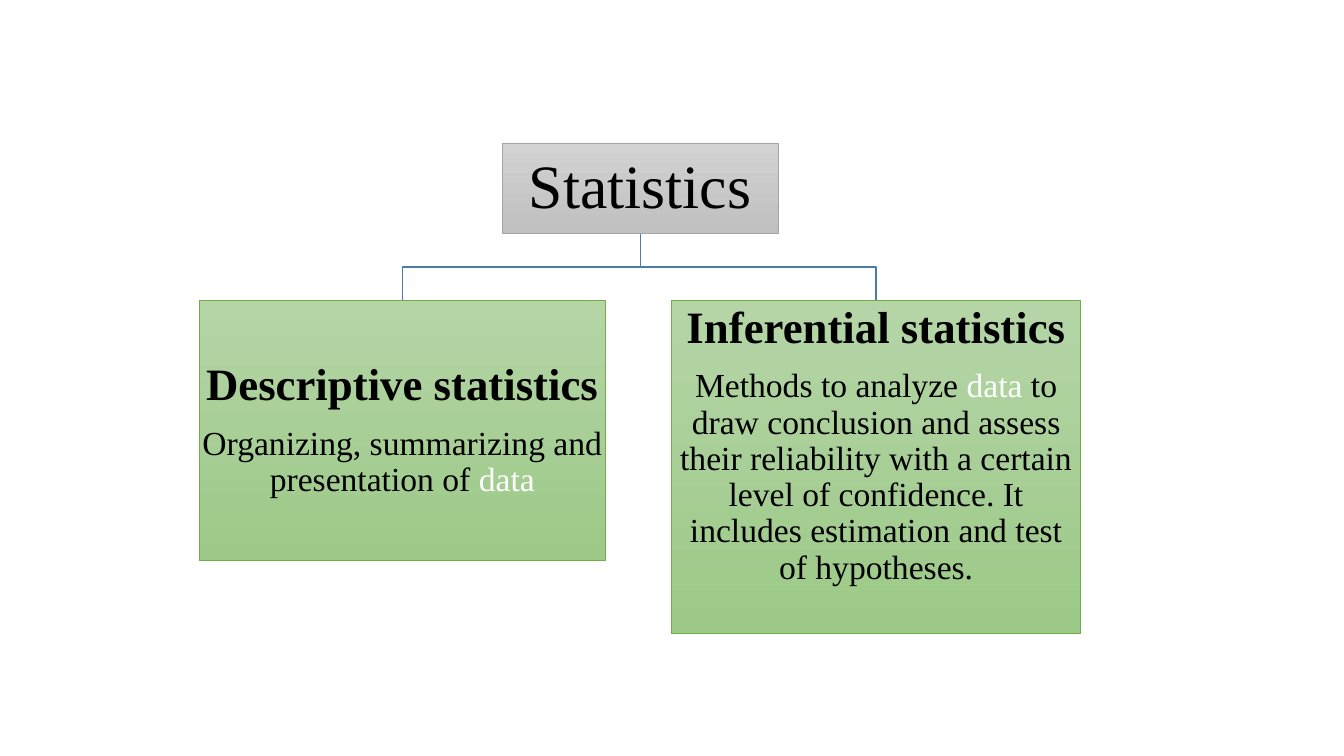
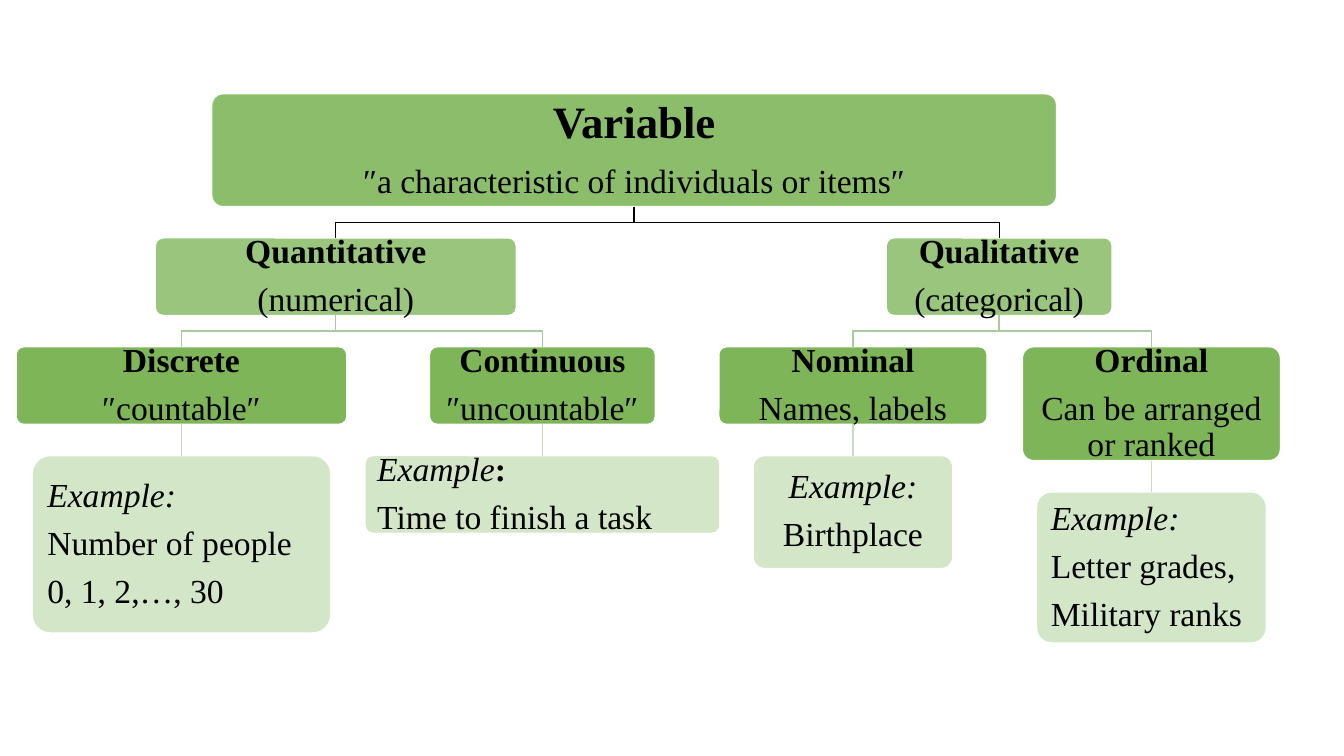
"""Build two classification trees: branches of statistics and types of variables."""
from dataclasses import dataclass

from lxml.etree import SubElement
from pptx import Presentation
from pptx.dml.color import RGBColor
from pptx.enum.shapes import MSO_CONNECTOR, MSO_SHAPE
from pptx.enum.text import MSO_ANCHOR, PP_ALIGN
from pptx.oxml.ns import qn
from pptx.shapes.autoshape import Shape
from pptx.slide import Slide
from pptx.util import Emu, Pt

EMU_PER_PX = 9144
FONT = "Times New Roman"
BLACK = RGBColor(0x00, 0x00, 0x00)
WHITE = RGBColor(0xFF, 0xFF, 0xFF)
GREEN = RGBColor(0x70, 0xAD, 0x47)
GREEN_TOP = RGBColor(0xB5, 0xD5, 0xA7)
GREEN_BOTTOM = RGBColor(0x9C, 0xC9, 0x87)
GRAY = RGBColor(0xA5, 0xA5, 0xA5)
GRAY_TOP = RGBColor(0xD2, 0xD2, 0xD2)
GRAY_BOTTOM = RGBColor(0xC0, 0xC0, 0xC0)
BLUE_LINK = RGBColor(0x49, 0x7C, 0xAB)
GREEN_LINK = RGBColor(0xAC, 0xCA, 0x9F)
PALE_LINK = RGBColor(0xC9, 0xDB, 0xC1)


@dataclass(frozen=True)
class Span:
    """A run of evenly formatted text."""
    text: str
    size: int = 24
    bold: bool = False
    italic: bool = False
    color: RGBColor = BLACK


@dataclass(frozen=True)
class Style:
    """The look of one tree level and of the links leading to it."""
    fill: tuple[RGBColor, ...]
    border: RGBColor
    border_width: float
    inset: int
    link: RGBColor = BLACK
    opacity: int = 100
    rounded: bool = False


@dataclass(frozen=True)
class Node:
    """A box placed by its middle, with the boxes below it."""
    center: int
    width: int
    height: int
    style: Style
    paragraphs: tuple[tuple[Span, ...], ...]
    children: tuple["Node", ...] = ()
    align: PP_ALIGN = PP_ALIGN.CENTER
    bottom_space: int = 0


def px(length: int) -> Emu:
    """Turn px into EMU."""
    return Emu(length * EMU_PER_PX)


def line(*spans: Span | str) -> tuple[Span, ...]:
    """Make one paragraph, taking bare strings as plain text."""
    return tuple(Span(span) if isinstance(span, str) else span for span in spans)


def head(text: str, size: int = 24) -> tuple[Span, ...]:
    """Make a bold heading paragraph."""
    return line(Span(text, size, bold=True))


def level(opacity: int, link: RGBColor = BLACK, inset: int = 10) -> Style:
    """Make the style of a level in the variable tree."""
    return Style((GREEN,), WHITE, 1, inset, link, opacity, rounded=True)


def paint(box: Shape, style: Style) -> None:
    """Apply fill and border."""
    if len(style.fill) > 1:
        box.fill.gradient()
        box.fill.gradient_angle = 270
        for stop, color in zip(box.fill.gradient_stops, style.fill):
            stop.color.rgb = color
    else:
        box.fill.solid()
        box.fill.fore_color.rgb = style.fill[0]
        color_tag = box._element.spPr.find(f"{qn('a:solidFill')}/{qn('a:srgbClr')}")
        SubElement(color_tag, qn("a:alpha")).set("val", str(style.opacity * 1000))
    box.line.color.rgb = style.border
    box.line.width = Pt(style.border_width)
    box.shadow.inherit = False


def write(box: Shape, node: Node) -> None:
    """Write the paragraphs of a node into its box."""
    frame = box.text_frame
    frame.word_wrap = True
    frame.vertical_anchor = MSO_ANCHOR.MIDDLE
    frame.margin_left = frame.margin_right = frame.margin_top = px(node.style.inset)
    frame.margin_bottom = px(node.style.inset + node.bottom_space)
    for index, spans in enumerate(node.paragraphs):
        para = frame.add_paragraph() if index else frame.paragraphs[0]
        para.alignment = node.align
        para.line_spacing = 0.9
        para.space_after = Pt(0.35 * spans[0].size)
        for span in spans:
            run = para.add_run()
            run.text = span.text
            run.font.name = FONT
            run.font.size = Pt(span.size)
            run.font.bold = span.bold
            run.font.italic = span.italic
            run.font.color.rgb = span.color


def link_boxes(page: Slide, parent: Shape, child: Shape, color: RGBColor) -> None:
    """Link two boxes, by a stepped line where their middles differ."""
    start_x, end_x = (box.left + box.width // 2 for box in (parent, child))
    start_y, end_y = parent.top + parent.height, child.top
    if start_x == end_x:
        link = page.shapes.add_connector(MSO_CONNECTOR.STRAIGHT, start_x, start_y, end_x, end_y)
        link.begin_connect(parent, 2)
        link.end_connect(child, 0)
    else:
        bend_y = (start_y + end_y) // 2
        builder = page.shapes.build_freeform(start_x, start_y)
        builder.add_line_segments(
            [(start_x, bend_y), (end_x, bend_y), (end_x, end_y)], close=False)
        link = builder.convert_to_shape()
        link.fill.background()
    link.line.color.rgb = color
    link.line.width = Pt(1)
    SubElement(link._element.spPr, qn("a:effectLst"))


def draw_tree(page: Slide, node: Node, top: int, gap: int) -> Shape:
    """Draw a node and everything below it."""
    kind = MSO_SHAPE.ROUNDED_RECTANGLE if node.style.rounded else MSO_SHAPE.RECTANGLE
    box = page.shapes.add_shape(
        kind, px(node.center - node.width // 2), px(top), px(node.width), px(node.height))
    if node.style.rounded:
        box.adjustments[0] = 0.1
    paint(box, node.style)
    write(box, node)
    for child in node.children:
        child_box = draw_tree(page, child, top + node.height + gap, gap)
        link_boxes(page, box, child_box, child.style.link)
    return box


ROOT = Style((GRAY_TOP, GRAY_BOTTOM), GRAY, 0.5, 3)
BRANCH = Style((GREEN_TOP, GREEN_BOTTOM), GREEN, 0.5, 2, BLUE_LINK)
VARIABLE = level(80, inset=13)
KIND = level(70)
TYPE = level(90, GREEN_LINK)
SAMPLE = level(30, PALE_LINK)
DATA = Span("data", color=WHITE)
EXAMPLE = line(Span("Example:", italic=True))

STATISTICS_TREE = Node(635, 274, 90, ROOT, (line(Span("Statistics", 44)),), (
    Node(399, 402, 258, BRANCH, (
        head("Descriptive statistics", 32),
        line("Organizing, summarizing and presentation of ", DATA))),
    Node(869, 406, 330, BRANCH, (
        head("Inferential statistics", 32),
        line("Methods to analyze ", DATA,
             " to draw conclusion and assess their reliability with a certain level of "
             "confidence. It includes estimation and test of hypotheses.")),
         bottom_space=42),
))

VARIABLE_TREE = Node(629, 838, 112, VARIABLE, (
    head("Variable", 32), line("″a characteristic of individuals or items″")), (
    Node(333, 358, 77, KIND, (head("Quantitative"), line("(numerical)")), (
        Node(180, 328, 77, TYPE, (head("Discrete"), line("″countable″")), (
            Node(180, 296, 176, SAMPLE,
                 (EXAMPLE, line("Number of people"), line("0, 1, 2,…, 30")),
                 align=PP_ALIGN.LEFT),)),
        Node(538, 224, 77, TYPE, (head("Continuous"), line("″uncountable″")), (
            Node(538, 352, 77, SAMPLE,
                 (line(Span("Example", italic=True), Span(":", bold=True)),
                  line("Time to finish a task")),
                 align=PP_ALIGN.LEFT),)),
    )),
    Node(991, 224, 77, KIND, (head("Qualitative"), line("(categorical)")), (
        Node(846, 266, 77, TYPE, (head("Nominal"), line("Names, labels")), (
            Node(846, 198, 112, SAMPLE, (EXAMPLE, line("Birthplace"))),)),
        Node(1142, 256, 113, TYPE, (head("Ordinal"), line("Can be arranged or ranked")), (
            Node(1142, 228, 150, SAMPLE,
                 (EXAMPLE, line("Letter grades,"), line("Military ranks")),
                 align=PP_ALIGN.LEFT),)),
    )),
))


def main() -> None:
    """Build and save the deck."""
    deck = Presentation()
    deck.slide_width, deck.slide_height = px(1333), px(750)
    for tree, top, gap in ((STATISTICS_TREE, 142, 66), (VARIABLE_TREE, 93, 31)):
        page = deck.slides.add_slide(deck.slide_layouts[6])
        draw_tree(page, tree, top, gap)
    deck.save("out.pptx")


if __name__ == "__main__":
    main()
